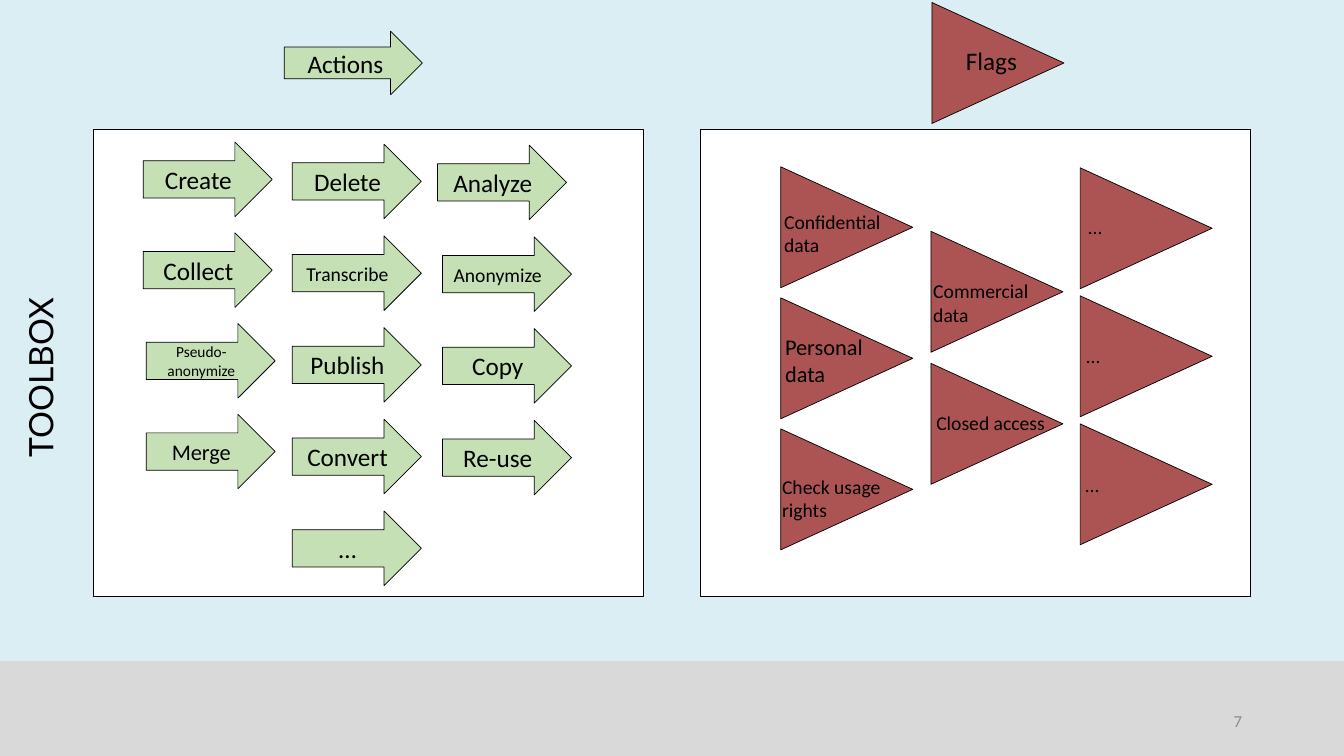
import pptx
import pptx.util
import pptx.dml.color
import pptx.enum.shapes
import pptx.enum.text
from dataclasses import dataclass

SHAPE = pptx.enum.shapes.MSO_SHAPE
ALIGN = pptx.enum.text.PP_ALIGN
ANCHOR = pptx.enum.text.MSO_ANCHOR

# The slide is a grid of square cells, 75 rows high
COLUMNS, ROWS = 133.33, 75
CELL = pptx.util.Inches(0.1)


@dataclass(frozen=True)
class Theme:
    background: str = "DBEEF4"
    footer: str = "D9D9D9"
    panel: str = "FFFFFF"
    action: str = "C5E0B4"
    flag: str = "AC5454"
    ink: str = "000000"
    page: str = "8C8C8C"
    body_font: str = "Calibri"
    title_font: str = "Lato"
    title: int = 24
    large: int = 18
    medium: int = 16
    normal: int = 14
    small: int = 12
    tiny: int = 11
    outline: float = 0.5


THEME = Theme()
ACTION_SIZE = (12.8, 7.4)
FLAG_SIZE = (12, 13.1)

# Each column: left and top in its panel, row step, then its entries
# Action entry: label, type size, shift to the right
ACTION_COLUMNS = [
    (4.9, 1.3, 9, [("Create", THEME.large, 0), ("Collect", THEME.large, 0),
                   ("Pseudo-anonymize", THEME.tiny, 0.3), ("Merge", THEME.medium, 0.3)]),
    (19.7, 1.5, 9.1, [("Delete", THEME.large, 0), ("Transcribe", THEME.normal, 0),
                      ("Publish", THEME.large, 0), ("Convert", THEME.large, 0),
                      ("…", THEME.large, 0)]),
    (34.6, 1.6, 9.1, [("Analyze", THEME.large, -0.5), ("Anonymize", THEME.normal, 0),
                      ("Copy", THEME.large, 0), ("Re-use", THEME.large, 0)]),
]
# Flag entry: label, type size, label offset from the flag
FLAG_COLUMNS = [
    (8.5, 3.2, 13, [("Confidential data", THEME.normal, (-1.2, 4.3)),
                    ("Personal data", THEME.medium, (-1.1, 3.6)),
                    ("Check usage rights", THEME.normal, (-1.4, 4.6))]),
    (23.4, 9.6, 13.1, [("Commercial\ndata", THEME.normal, (-1.3, 4.8)),
                       ("Closed access", THEME.normal, (-1, 4.8))]),
    (38.2, 3.3, 12.7, [("…", THEME.normal, (-0.7, 4.7)),
                       ("…", THEME.normal, (-0.9, 4.8)),
                       ("…", THEME.normal, (-1, 4.9))]),
]


def rgb(value):
    return pptx.dml.color.RGBColor.from_string(value)


def place(box):
    return [round(length * CELL) for length in box]


def apply(target, formats):
    for name, value in formats.items():
        setattr(target, name, value)


def write(holder, text, size, align=ALIGN.LEFT, anchor=ANCHOR.TOP,
          color=THEME.ink, font=THEME.body_font, spacing=None):
    frame = holder.text_frame
    apply(frame, {"word_wrap": True, "vertical_anchor": anchor, "text": text})
    for paragraph in frame.paragraphs:
        apply(paragraph, {"alignment": align, "line_spacing": spacing})
        apply(paragraph.font, {"name": font, "size": pptx.util.Pt(size)})
        paragraph.font.color.rgb = rgb(color)


def add_label(slide, box, text, size, **formats):
    label = slide.shapes.add_textbox(*place(box))
    write(label, text, size, **formats)
    return label


def add_block(slide, kind, box, fill, outlined=True, rotation=0):
    block = slide.shapes.add_shape(kind, *place(box))
    block.shadow.inherit = False
    block.rotation = rotation
    block.fill.solid()
    block.fill.fore_color.rgb = rgb(fill)
    if outlined:
        block.line.color.rgb = rgb(THEME.ink)
        block.line.width = pptx.util.Pt(THEME.outline)
    else:
        block.line.fill.background()
    return block


def add_action(slide, box, text, size):
    arrow = add_block(slide, SHAPE.RIGHT_ARROW, box, THEME.action)
    write(arrow, text, size, align=ALIGN.CENTER, anchor=ANCHOR.MIDDLE)


def add_flag(slide, left, top, text, size, offset, align=ALIGN.LEFT):
    add_block(slide, SHAPE.ISOSCELES_TRIANGLE, (left, top, *FLAG_SIZE),
              THEME.flag, rotation=90)
    add_label(slide, (left + offset[0], top + offset[1], 13.7, 4),
              text, size, align=align)


# Backdrop: colour, footer band, side title and page number
def add_backdrop(slide, width, height):
    slide.background.fill.solid()
    slide.background.fill.fore_color.rgb = rgb(THEME.background)
    footer = 9.4
    add_block(slide, SHAPE.RECTANGLE, (0, height - footer, width, footer),
              THEME.footer, outlined=False)
    title = add_label(slide, (-18.1, 35.3, 45, 4.3), "TOOLBOX", THEME.title,
                      align=ALIGN.CENTER, font=THEME.title_font, spacing=0.8)
    title.rotation = 270
    add_label(slide, (94.2, height - 5.5, 30, 4), "7", THEME.small,
              align=ALIGN.RIGHT, anchor=ANCHOR.MIDDLE, color=THEME.page)


# Actions: heading arrow above a panel of arrows
def add_actions(slide, box):
    left, top = box[:2]
    add_block(slide, SHAPE.RECTANGLE, box, THEME.panel)
    add_action(slide, (left + 18.9, top - 9.7, 13.7, 6.3), "Actions", THEME.large)
    for column, first, step, entries in ACTION_COLUMNS:
        for row, (text, size, shift) in enumerate(entries):
            spot = (left + column + shift, top + first + row * step)
            add_action(slide, (*spot, *ACTION_SIZE), text, size)


# Flags: heading flag above a panel of flags
def add_flags(slide, box):
    left, top = box[:2]
    add_block(slide, SHAPE.RECTANGLE, box, THEME.panel)
    add_flag(slide, left + 23.5, top - 13.1, "Flags", THEME.large,
             (-1.5, 4.3), align=ALIGN.CENTER)
    for column, first, step, entries in FLAG_COLUMNS:
        for row, (text, size, offset) in enumerate(entries):
            add_flag(slide, left + column, top + first + row * step,
                     text, size, offset)


def main():
    deck = pptx.Presentation()
    apply(deck, {"slide_width": round(COLUMNS * CELL), "slide_height": ROWS * CELL})
    slide = deck.slides.add_slide(deck.slide_layouts[6])
    add_backdrop(slide, COLUMNS, ROWS)
    panel_top, panel_size = 12.8, (54.5, 46.4)
    add_actions(slide, (9.3, panel_top, *panel_size))
    add_flags(slide, (69.5, panel_top, *panel_size))
    deck.save("out.pptx")


if __name__ == "__main__":
    main()
